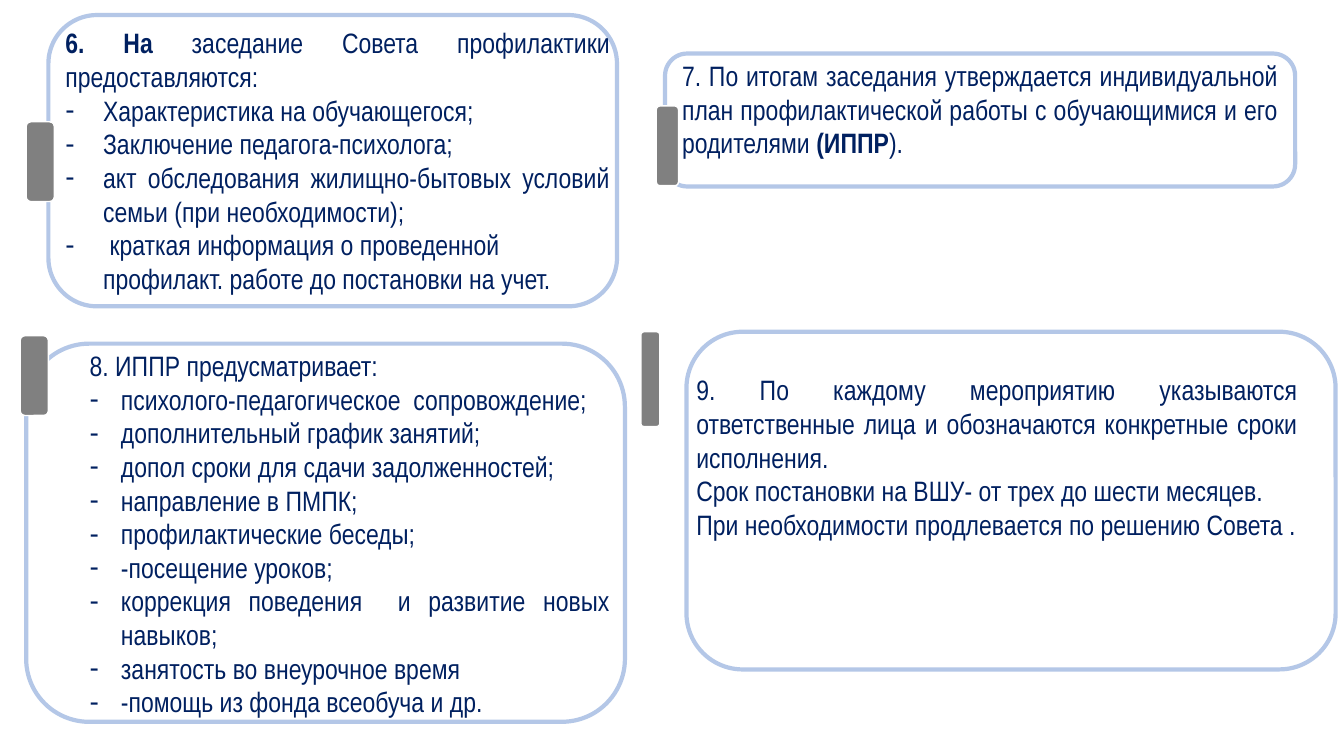
from lxml.etree import SubElement
from pptx import Presentation
from pptx.dml.color import RGBColor
from pptx.enum.shapes import MSO_SHAPE as Preset
from pptx.enum.text import MSO_AUTO_SIZE as AutoSize, PP_ALIGN as Align
from pptx.oxml.ns import qn
from pptx.util import Cm, Pt

# Content: heading lines hold (text, bold) parts; places are left, top, width, height in cm
STEPS = [
    {
        "frame": (16.76, 1.35, 15.88, 3.35),
        "marker": (16.54, 2.67, 0.56, 2.01),
        "text": (16.94, 1.35, 15.52, 3.68),
        "lines": [[
            ("7. По итогам заседания утверждается индивидуальной план "
             "профилактической работы с обучающимися и его родителями ", False),
            ("(ИППР", True),
            (").", False),
        ]],
    },
    {
        "frame": (0.66, 8.66, 15.09, 9.53),
        "marker": (0.51, 8.46, 0.71, 2.01),
        "text": (2.01, 8.66, 13.61, 9.6),
        "lines": [[("8. ИППР предусматривает:", False)]],
        "indent": 0.79,
        "items": [
            "психолого-педагогическое  сопровождение;",
            "дополнительный график занятий;",
            "допол сроки для сдачи задолженностей;",
            "направление в ПМПК;",
            "профилактические беседы;",
            "-посещение уроков;",
            "коррекция поведения  и развитие новых навыков;",
            "занятость во внеурочное время",
            "-помощь из фонда всеобуча и др.",
        ],
    },
    {
        "frame": (17.3, 8.36, 16.36, 8.51),
        "marker": (16.15, 8.36, 0.48, 2.39),
        "text": (17.3, 9.27, 15.65, 6.25),
        "lines": [
            [("9. По каждому мероприятию указываются ответственные лица "
              "и обозначаются конкретные сроки исполнения.", False)],
            [("Срок постановки на ВШУ- от трех до шести месяцев.", False)],
            [("При необходимости продлевается по решению Совета .", False)],
        ],
    },
    {
        "frame": (1.22, 0.38, 14.33, 7.34),
        "marker": (0.66, 3.07, 0.71, 2.01),
        "text": (1.4, 0.53, 14.22, 7.09),
        "lines": [[("6. На ", True),
                   ("заседание Совета профилактики предоставляются:", False)]],
        "indent": 0.95,
        "items": [
            "Характеристика на обучающегося;",
            "Заключение педагога-психолога;",
            "акт обследования жилищно-бытовых условий семьи (при необходимости);",
            " краткая информация о проведенной профилакт. работе до постановки на учет.",
        ],
        "last_align": Align.LEFT,
    },
]

COLORS = {"paper": "FFFFFF", "border": "B4C7E7", "marker": "808080", "ink": "002060"}
FONT = {"name": "Arial Narrow", "size": Pt(20)}


def color(key):
    return RGBColor.from_string(COLORS[key])


def place(box):
    return [Cm(length) for length in box]


def add_rounded(slide, box, fill, line, width):
    rounded = slide.shapes.add_shape(Preset.ROUNDED_RECTANGLE, *place(box))
    rounded.shadow.inherit = False
    rounded.fill.solid()
    rounded.fill.fore_color.rgb = color(fill)
    rounded.line.color.rgb = color(line)
    rounded.line.width = Pt(width)


def add_dash(paragraph, indent):
    props = paragraph._p.get_or_add_pPr()
    props.set("marL", str(Cm(indent)))
    props.set("indent", str(-Cm(indent)))
    SubElement(props, qn("a:buFont"), typeface="Arial")
    SubElement(props, qn("a:buChar"), char="-")


def add_text(slide, step):
    frame = slide.shapes.add_textbox(*place(step["text"])).text_frame
    frame.word_wrap = True
    frame.auto_size = AutoSize.SHAPE_TO_FIT_TEXT
    headings = step["lines"]
    lines = headings + [[(item, False)] for item in step.get("items", [])]
    for number, parts in enumerate(lines):
        paragraph = frame.add_paragraph() if number else frame.paragraphs[0]
        paragraph.alignment = Align.JUSTIFY
        if number >= len(headings):
            add_dash(paragraph, step["indent"])
        for words, bold in parts:
            run = paragraph.add_run()
            run.text = words
            for attribute, value in {**FONT, "bold": bold}.items():
                setattr(run.font, attribute, value)
            run.font.color.rgb = color("ink")
    paragraph.alignment = step.get("last_align", Align.JUSTIFY)


def main():
    deck = Presentation()
    deck.slide_width, deck.slide_height = Cm(33.87), Cm(19.05)
    slide = deck.slides.add_slide(deck.slide_layouts[6])

    # Each step: outlined frame, grey marker on its edge, text on top
    for step in STEPS:
        add_rounded(slide, step["frame"], "paper", "border", 3)
        add_rounded(slide, step["marker"], "marker", "paper", 1)
        add_text(slide, step)

    deck.save("out.pptx")


if __name__ == "__main__":
    main()
